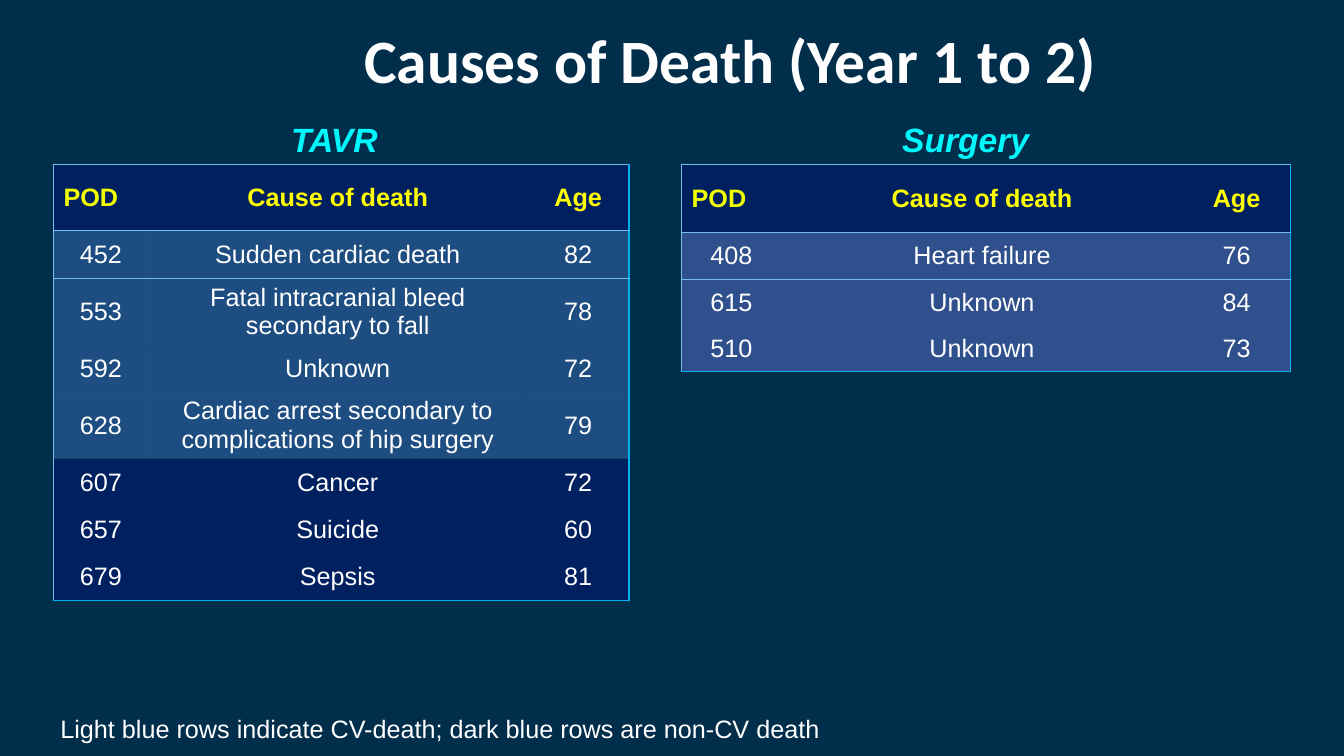
from lxml import etree
from pptx import Presentation
from pptx.dml.color import RGBColor
from pptx.enum.text import MSO_ANCHOR, MSO_AUTO_SIZE, PP_ALIGN
from pptx.oxml.ns import qn
from pptx.util import Inches, Pt

CENTER, LEFT = PP_ALIGN.CENTER, PP_ALIGN.LEFT
MIDDLE = MSO_ANCHOR.MIDDLE
FIT_SHAPE = MSO_AUTO_SIZE.SHAPE_TO_FIT_TEXT
NO_AUTO_SIZE = MSO_AUTO_SIZE.NONE

NAVY, WHITE, CYAN = "002060", "FFFFFF", "00F9FF"
PALE_LINE, BRIGHT_LINE = "6FBDEE", "00B0F0"
HEADER_COLORS = ["F1FE00", "FFFF00", "FFFF00"]
HEADER = ["POD", "Cause of death", "Age"]
NO_GRID_STYLE = "{2D5ABB26-0587-4C30-8999-92F81FD0307C}"


def rgb(value):
    return RGBColor.from_string(value)


def add_run(paragraph, text, size, color, bold=False, italic=False, name="Arial"):
    run = paragraph.add_run()
    run.text = text
    run.font.size = Pt(size)
    run.font.name = name
    run.font.bold = bold
    run.font.italic = italic
    run.font.color.rgb = rgb(color)


presentation = Presentation()
presentation.slide_width = Inches(13.33)
presentation.slide_height = Inches(7.5)
slide = presentation.slides.add_slide(presentation.slide_layouts[5])
slide.background.fill.solid()
slide.background.fill.fore_color.rgb = rgb("002E4B")

title = slide.shapes.title
title.left, title.top = Inches(1.58), Inches(0.17)
title.width, title.height = Inches(11.33), Inches(0.83)
title_frame = title.text_frame
title_frame.auto_size = NO_AUTO_SIZE
title_frame.vertical_anchor = MIDDLE
title_frame.margin_left = title_frame.margin_right = Inches(0.05)
title_frame.margin_top = title_frame.margin_bottom = Inches(0.05)
title_frame.paragraphs[0].alignment = CENTER
add_run(title_frame.paragraphs[0], "Causes of Death (Year 1 to 2)", 44, WHITE, bold=True, name="Calibri")

tavr_deaths = [
    ["452", "Sudden cardiac death", "82"],
    ["553", "Fatal intracranial bleed secondary to fall", "78"],
    ["592", "Unknown", "72"],
    ["628", "Cardiac arrest secondary to complications of hip surgery", "79"],
    ["607", "Cancer", "72"],
    ["657", "Suicide", "60"],
    ["679", "Sepsis", "81"],
]
surgery_deaths = [
    ["408", "Heart failure", "76"],
    ["615", "Unknown", "84"],
    ["510", "Unknown", "73"],
]
tables = [
    (0.53, [0.94, 3.76, 1.01], 0.66, 0.47, tavr_deaths, 4, "6699FF", 30),
    (6.76, [0.99, 3.98, 1.07], 0.68, 0.46, surgery_deaths, 3, "30508D", 100),
]

for left, widths, header_height, row_height, deaths, cardiac_count, light_blue, opacity in tables:
    rows = [HEADER] + deaths
    heights = [header_height] + [row_height] * len(deaths)
    frame = slide.shapes.add_table(
        len(rows), len(widths), Inches(left), Inches(1.63), Inches(sum(widths)), Inches(sum(heights))
    )
    table = frame.table
    table.horz_banding = False
    table.first_row = False
    table._tbl.tblPr.find(qn("a:tableStyleId")).text = NO_GRID_STYLE
    for column, width in zip(table.columns, widths):
        column.width = Inches(width)
    for row_index, (values, height) in enumerate(zip(rows, heights)):
        table.rows[row_index].height = Inches(height)
        is_header = row_index == 0
        is_cardiac = 1 <= row_index <= cardiac_count
        for column_index, value in enumerate(values):
            cell = table.cell(row_index, column_index)
            cell.vertical_anchor = MIDDLE
            paragraph = cell.text_frame.paragraphs[0]
            paragraph.alignment = LEFT if is_header and column_index == 0 else CENTER
            color = HEADER_COLORS[column_index] if is_header else WHITE
            add_run(paragraph, value, 18, color, bold=is_header)

            borders = {}
            if column_index == 0:
                borders["a:lnL"] = PALE_LINE
            if column_index == len(widths) - 1:
                borders["a:lnR"] = BRIGHT_LINE
            if row_index <= 1:
                borders["a:lnT"] = PALE_LINE
            if is_header:
                borders["a:lnB"] = PALE_LINE
            if row_index == len(deaths):
                borders["a:lnB"] = BRIGHT_LINE
            properties = cell._tc.get_or_add_tcPr()
            for side, line_color in borders.items():
                line = etree.SubElement(properties, qn(side), w=str(Pt(1)))
                line_fill = etree.SubElement(line, qn("a:solidFill"))
                etree.SubElement(line_fill, qn("a:srgbClr"), val=line_color)

            cell.fill.solid()
            cell.fill.fore_color.rgb = rgb(light_blue if is_cardiac else NAVY)
            if is_cardiac and opacity < 100:
                fill_color = properties.find(qn("a:solidFill")).find(qn("a:srgbClr"))
                etree.SubElement(fill_color, qn("a:alpha"), val=str(opacity * 1000))

labels = [
    ("TAVR", 2.79, 1.13, 1.07, 0.5, 24, CYAN, True),
    ("Surgery", 8.85, 1.13, 1.47, 0.5, 24, CYAN, True),
    ("Light blue rows indicate CV-death; dark blue rows are non-CV death", 0.5, 7.03, 7.81, 0.4, 18, WHITE, False),
]
for text, left, top, width, height, size, color, emphasized in labels:
    label = slide.shapes.add_textbox(Inches(left), Inches(top), Inches(width), Inches(height))
    label.text_frame.word_wrap = False
    label.text_frame.auto_size = FIT_SHAPE
    add_run(label.text_frame.paragraphs[0], text, size, color, bold=emphasized, italic=emphasized)

presentation.save("out.pptx")
